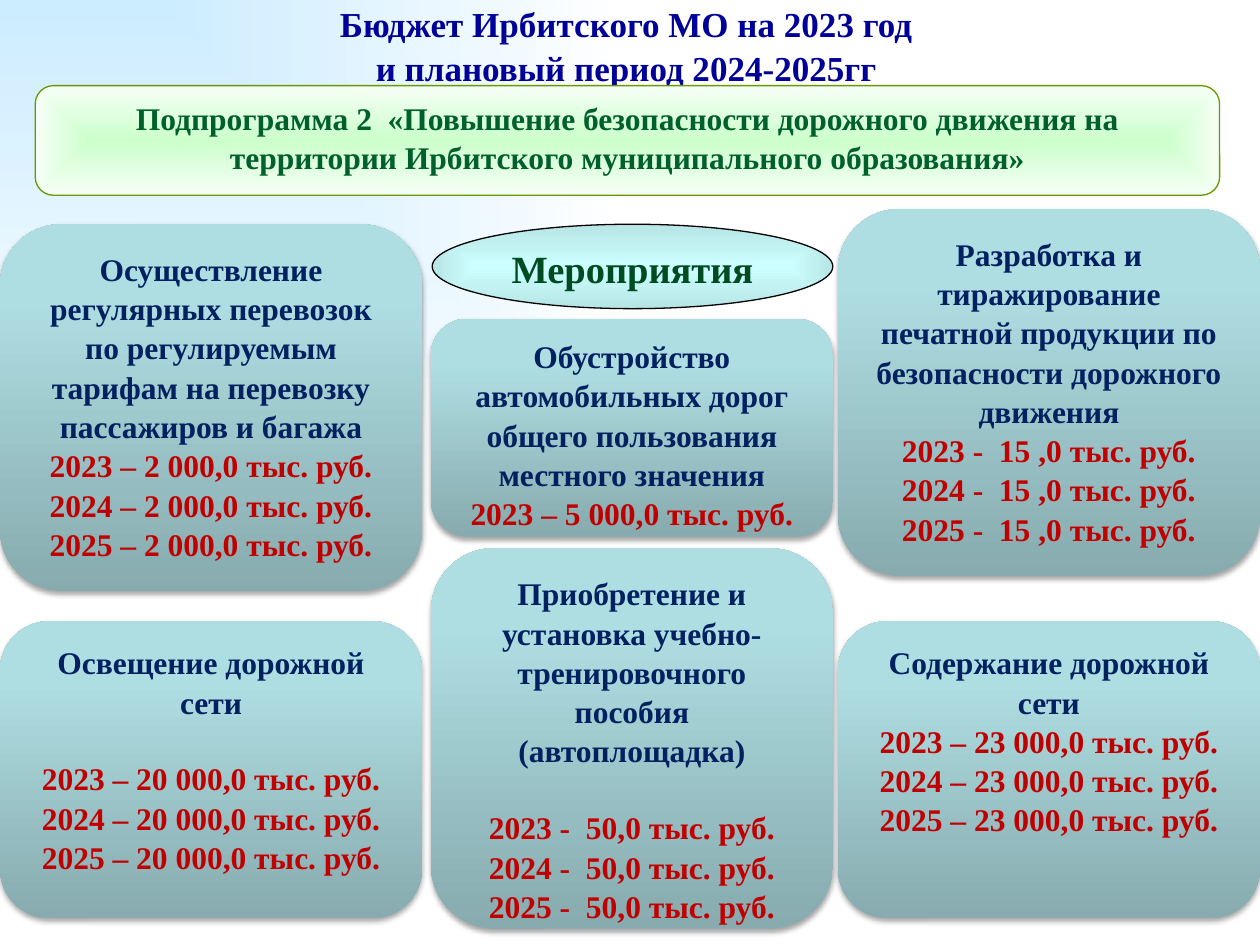
from pptx import Presentation
from pptx import util as u
from pptx.dml.color import RGBColor
from pptx.enum import shapes, text
from pptx.oxml import parse_xml
from pptx.oxml.ns import nsdecls, qn

FONT = "Times New Roman"
NAVY, RED = "002060", "C00000"
CARD_STOPS = [(0, "87ABAE"), (80, "AFDEE2"), (100, "AFE0E4")]
LEFT, MIDDLE, RIGHT = (0, 3.35), (3.42, 3.19), (6.65, 3.35)


def color(value):
    """Turn a hex string into a colour."""
    return RGBColor.from_string(value)


def set_gradient(properties, stops, direction):
    """Replace the solid fill with a gradient of the given stops."""
    stop_list = "".join(
        f'<a:gs pos="{position * 1000}"><a:srgbClr val="{value}"/></a:gs>'
        for position, value in stops)
    gradient = parse_xml(f'<a:gradFill {nsdecls("a")} rotWithShape="1">'
                         f'<a:gsLst>{stop_list}</a:gsLst>{direction}</a:gradFill>')
    solid = properties.find(qn("a:solidFill"))
    properties.replace(solid, gradient)


def linear(angle):
    """Describe a straight gradient at an angle in degrees."""
    return f'<a:lin ang="{angle * 60000}" scaled="0"/>'


def focused(kind, left, top, right, bottom):
    """Describe a path gradient that starts at a focus given in percent."""
    sides = zip("ltrb", (left, top, right, bottom))
    focus = " ".join(f'{side}="{percent * 1000}"' for side, percent in sides)
    return f'<a:path path="{kind}"><a:fillToRect {focus}/></a:path>'


def add_line(frame, wording, size=18, ink=NAVY, before=0):
    """Add a centred bold paragraph to a text frame."""
    paragraph = frame.paragraphs[0]
    if paragraph.runs:
        paragraph = frame.add_paragraph()
    paragraph.alignment = text.PP_ALIGN.CENTER
    paragraph.line_spacing = 1.04
    paragraph.space_before = u.Pt(before)
    run = paragraph.add_run()
    run.text = wording
    run.font.name, run.font.size, run.font.bold = FONT, u.Pt(size), True
    run.font.color.rgb = color(ink)


def add_panel(slide, kind, box, stops, direction, outline=None):
    """Add a gradient shape with top-anchored text."""
    panel = slide.shapes.add_shape(kind, *map(u.Inches, box))
    panel.shadow.inherit = False
    panel.fill.solid()
    set_gradient(panel.element.spPr, stops, direction)
    if outline:
        panel.line.color.rgb = color(outline)
        panel.line.width = u.Pt(0.75)
    else:
        panel.line.fill.background()
    panel.text_frame.word_wrap = True
    panel.text_frame.vertical_anchor = text.MSO_ANCHOR.TOP
    return panel


def add_card(slide, column, top, height, activity, amounts, gap=0):
    """Add an activity card with its yearly amounts."""
    left, width = column
    card = add_panel(slide, shapes.MSO_SHAPE.ROUNDED_RECTANGLE,
                     (left, top, width, height), CARD_STOPS, linear(270))
    card.element.spPr.find(qn("a:effectLst")).append(parse_xml(
        f'<a:outerShdw {nsdecls("a")} blurRad="{u.Pt(3.1)}" dist="{u.Pt(1.8)}" '
        'dir="5400000" rotWithShape="0"><a:srgbClr val="000000">'
        '<a:alpha val="35000"/></a:srgbClr></a:outerShdw>'))
    add_line(card.text_frame, activity)
    for index, amount in enumerate(amounts):
        add_line(card.text_frame, f"{amount} тыс. руб.", ink=RED,
                 before=0 if index else gap)


def yearly(separator, amount):
    """List the same amount for each of the three years."""
    return [f"{year}{separator}{amount}" for year in (2023, 2024, 2025)]


def add_title(slide):
    """Add the two-line heading."""
    heading = slide.shapes.add_textbox(*map(u.Inches, (0.47, 0, 9, 0.71))).text_frame
    heading.word_wrap = True
    heading.vertical_anchor = text.MSO_ANCHOR.MIDDLE
    for wording in ("Бюджет Ирбитского МО на 2023 год", "и плановый период 2024-2025гг"):
        add_line(heading, wording, size=20, ink="000099")


def main():
    """Build and save the slide."""
    deck = Presentation()
    deck.slide_width, deck.slide_height = u.Inches(10), u.Inches(7.5)
    slide = deck.slides.add_slide(deck.slide_layouts[6])
    slide.background.fill.solid()
    set_gradient(slide.element.xpath(".//p:bgPr")[0],
                 [(0, "CCECFF"), (100, "FFFFFF")], focused("rect", 0, 0, 100, 100))

    add_title(slide)
    subprogram = add_panel(slide, shapes.MSO_SHAPE.ROUNDED_RECTANGLE,
                           (0.28, 0.68, 9.4, 0.87), [(0, "CCFFCC"), (100, "F6FFF6")],
                           focused("shape", 50, 50, 50, 50), "669900")
    add_line(subprogram.text_frame,
             "Подпрограмма 2  «Повышение безопасности дорожного движения на "
             "территории Ирбитского муниципального образования»", ink="00602B")
    activities = add_panel(slide, shapes.MSO_SHAPE.OVAL, (3.43, 1.78, 3.18, 0.67),
                           [(0, "CCFFFF"), (100, "B7E5E5")],
                           focused("rect", 50, 50, 50, 50), "000000")
    add_line(activities.text_frame, "Мероприятия", size=22, ink="004C22")

    add_card(slide, LEFT, 1.78, 2.91,
             "Осуществление регулярных перевозок по регулируемым тарифам "
             "на перевозку пассажиров и багажа", yearly(" – ", "2 000,0"))
    add_card(slide, MIDDLE, 2.53, 1.73,
             "Обустройство автомобильных дорог общего пользования местного значения",
             ["2023 – 5 000,0"])
    add_card(slide, RIGHT, 1.66, 2.91,
             "Разработка и тиражирование печатной продукции по безопасности "
             "дорожного движения", yearly(" -  ", "15 ,0"))
    add_card(slide, LEFT, 4.93, 2.36, "Освещение дорожной сети",
             yearly(" – ", "20 000,0"), gap=21.5)
    add_card(slide, MIDDLE, 4.35, 3.02,
             "Приобретение и установка учебно-тренировочного пособия (автоплощадка)",
             yearly(" -  ", "50,0"), gap=21.5)
    add_card(slide, RIGHT, 4.93, 2.36, "Содержание дорожной сети",
             yearly(" – ", "23 000,0"))
    deck.save("out.pptx")


if __name__ == "__main__":
    main()
